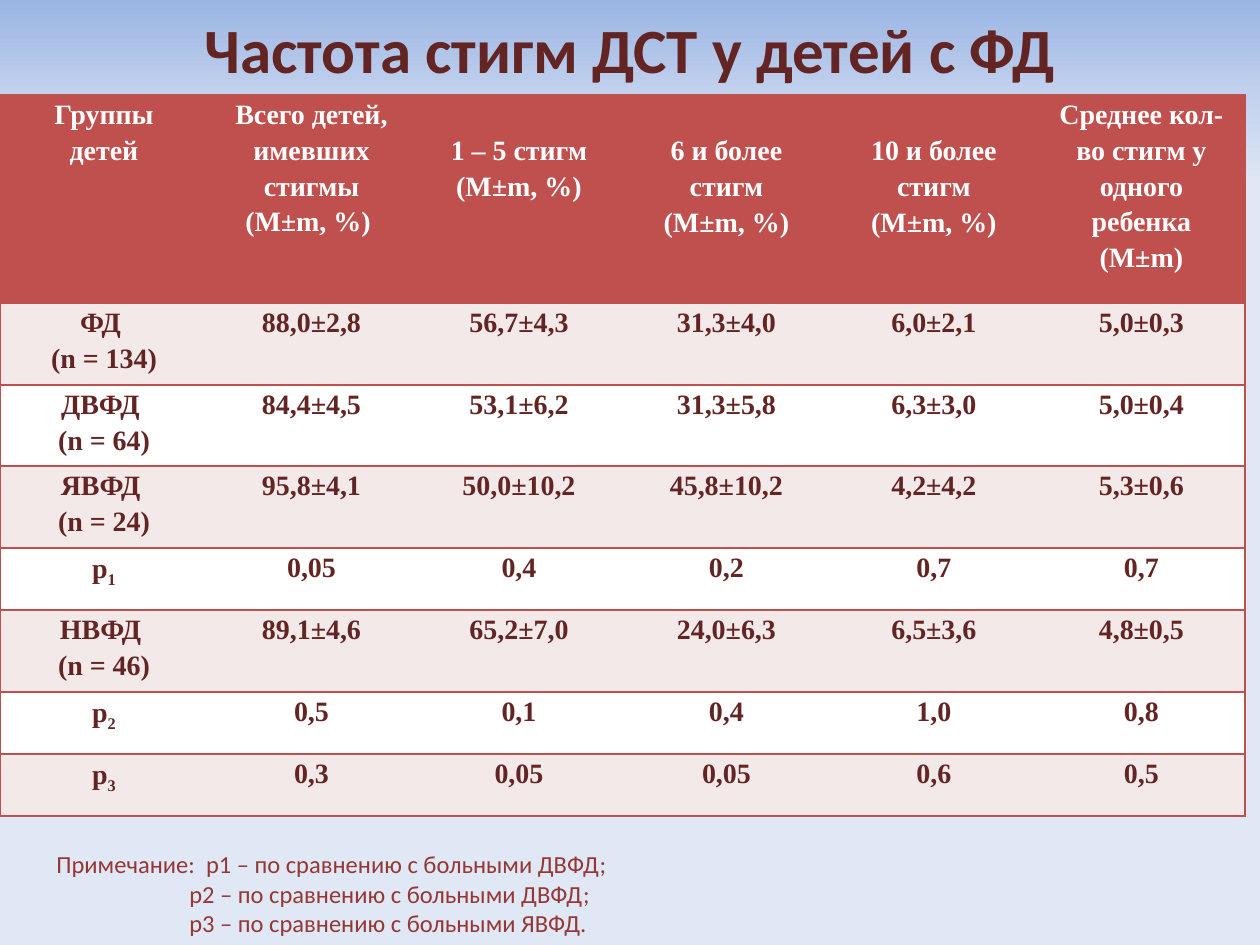
from copy import deepcopy

from lxml.etree import SubElement
from pptx import Presentation
from pptx.dml.color import RGBColor
from pptx.enum.text import MSO_ANCHOR, MSO_AUTO_SIZE, PP_ALIGN
from pptx.oxml.ns import qn
from pptx.util import Emu, Pt

PIXEL = 914400 / 126
RED = "C0504D"
DARK_RED = "632523"
WHITE = "FFFFFF"
PINK = "F4E9E9"
NO_STYLE = "{2D5ABB26-0587-4C30-8999-92F81FD0307C}"


def px(length):
    return Emu(round(length * PIXEL))


def add_run(para, text, font, size, color, bold=True):
    run = para.add_run()
    run.text = text
    run.font.name = font
    run.font.size = Pt(size)
    run.font.bold = bold
    run.font.color.rgb = RGBColor.from_string(color)
    return run


deck = Presentation()
deck.slide_width, deck.slide_height = px(1260), px(945)
page = deck.slides.add_slide(deck.slide_layouts[5])

background = page.background.fill
background.gradient()
background.gradient_angle = 270
stop_list = page.element.find(".//" + qn("a:gsLst"))
stop_list.append(deepcopy(stop_list[-1]))
sky = [(0, "9AB5E4"), (0.1, "C2D1ED"), (0.2, "E1E8F5")]
for stop, (position, color) in zip(background.gradient_stops, sky):
    stop.position = position
    stop.color.rgb = RGBColor.from_string(color)

title = page.shapes.title
title.left, title.top, title.width, title.height = px(63), px(38), px(1134), px(97)
frame = title.text_frame
frame.auto_size = MSO_AUTO_SIZE.NONE
frame.vertical_anchor = MSO_ANCHOR.MIDDLE
frame.margin_top, frame.margin_bottom = 0, px(77)
para = frame.paragraphs[0]
para.alignment = PP_ALIGN.CENTER
add_run(para, "Частота стигм ДСТ у детей с ФД", "Calibri", 36, DARK_RED)

rows = [
    ["Группы\nдетей", "Всего детей, имевших стигмы\n(M±m, %) ", "1 – 5 стигм\n(M±m, %)",
     "6 и более стигм\n(M±m, %)", "10 и более стигм\n(M±m, %)",
     "Среднее кол-во стигм у одного ребенка\n(M±m)"],
    ["ФД \n(n = 134)", "88,0±2,8", "56,7±4,3", "31,3±4,0", "6,0±2,1", "5,0±0,3"],
    ["ДВФД \n(n = 64)", "84,4±4,5", "53,1±6,2", "31,3±5,8", "6,3±3,0", "5,0±0,4"],
    ["ЯВФД \n(n = 24)", "95,8±4,1", "50,0±10,2", "45,8±10,2", "4,2±4,2", "5,3±0,6"],
    ["р_1", "0,05", "0,4", "0,2", "0,7", "0,7"],
    ["НВФД \n(n = 46)", "89,1±4,6", "65,2±7,0", "24,0±6,3", "6,5±3,6", "4,8±0,5"],
    ["р_2", "0,5", "0,1", "0,4", "1,0", "0,8"],
    ["р_3", "0,3", "0,05", "0,05", "0,6", "0,5"],
]
column_widths = [208, 207] * 3
row_heights = [208, 82, 81, 82, 62, 82, 62, 62]
last_column = len(column_widths) - 1
lowered_headers = (2, 3, 4)

table_frame = page.shapes.add_table(len(rows), len(column_widths), 0, px(95),
                                    px(sum(column_widths)), px(sum(row_heights)))
table = table_frame.table
table_frame.element.find(".//" + qn("a:tableStyleId")).text = NO_STYLE
for column, width in zip(table.columns, column_widths):
    column.width = px(width)
for table_row, height in zip(table.rows, row_heights):
    table_row.height = px(height)

for row_index, row in enumerate(rows):
    is_header = row_index == 0
    fill_color = RED if is_header else PINK if row_index % 2 else WHITE
    text_color = WHITE if is_header else DARK_RED
    for column_index, text in enumerate(row):
        cell = table.cell(row_index, column_index)
        cell.margin_left = cell.margin_right = px(9)
        cell.margin_top = px(36) if is_header and column_index in lowered_headers else 0
        cell.margin_bottom = 0

        sides = ["a:lnT", "a:lnB"]
        if column_index == 0:
            sides.insert(0, "a:lnL")
        if column_index == last_column:
            sides.insert(0, "a:lnR")
        properties = cell._tc.get_or_add_tcPr()
        for side in sides:
            line = SubElement(properties, qn(side), w=str(Pt(1)))
            SubElement(SubElement(line, qn("a:solidFill")), qn("a:srgbClr"), val=RED)
        cell.fill.solid()
        cell.fill.fore_color.rgb = RGBColor.from_string(fill_color)

        for line_index, line_text in enumerate(text.split("\n")):
            frame = cell.text_frame
            para = frame.add_paragraph() if line_index else frame.paragraphs[0]
            para.alignment = PP_ALIGN.CENTER
            para.line_spacing = 1.15
            base, _, subscript = line_text.partition("_")
            add_run(para, base, "Times New Roman", 16, text_color)
            if subscript:
                run = add_run(para, subscript, "Times New Roman", 16, text_color)
                run.font._element.set("baseline", "-25000")

note = page.shapes.add_textbox(px(44), px(843), px(922), px(102))
note.text_frame.word_wrap = True
note_lines = [
    (0, "Примечание:  р1 – по сравнению с больными ДВФД;"),
    (133, "р2 – по сравнению с больными ДВФД;"),
    (133, "р3 – по сравнению с больными ЯВФД."),
]
for line_index, (indent, text) in enumerate(note_lines):
    para = note.text_frame.add_paragraph() if line_index else note.text_frame.paragraphs[0]
    para._p.get_or_add_pPr().set("marL", str(px(indent)))
    add_run(para, text, "Calibri", 14, "953735", bold=False)

deck.save("out.pptx")
